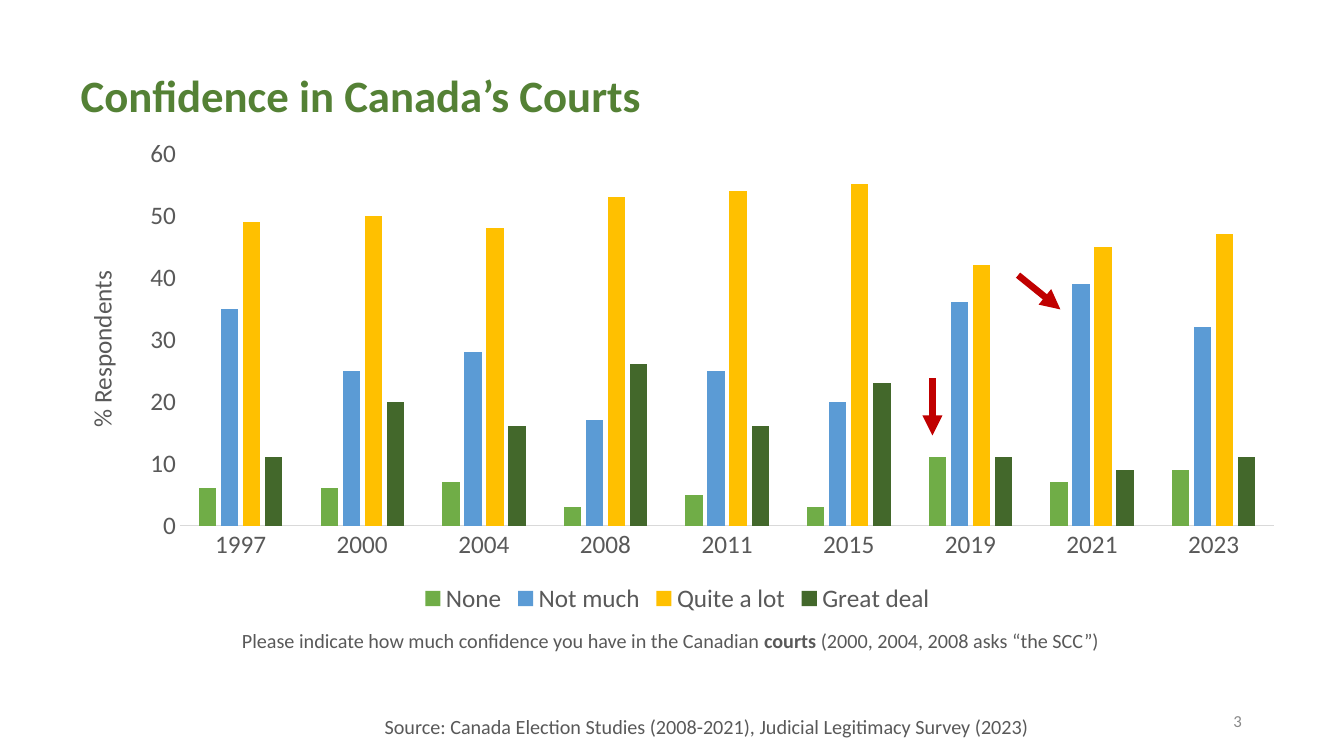
from dataclasses import dataclass

from pptx import Presentation
from pptx.chart.data import CategoryChartData
from pptx.dml.color import RGBColor
from pptx.enum.chart import XL_CHART_TYPE, XL_LEGEND_POSITION, XL_TICK_MARK
from pptx.enum.shapes import MSO_CONNECTOR
from pptx.enum.text import MSO_ANCHOR, PP_ALIGN
from pptx.oxml import parse_xml
from pptx.oxml.ns import nsdecls, qn
from pptx.util import Inches, Pt
from lxml.etree import SubElement


@dataclass(frozen=True)
class Theme:
    font: str = "Calibri"
    title: str = "548135"
    text: str = "595959"
    muted: str = "888888"
    axis: str = "D9D9D9"
    arrow: str = "C00000"
    title_size: float = 32
    chart_size: float = 18
    note_size: float = 14.4
    number_size: float = 12
    axis_width: float = 0.75
    arrow_width: float = 4.75


THEME = Theme()
WIDTH, HEIGHT = Inches(13.33), Inches(7.5)

YEARS = ["1997", "2000", "2004", "2008", "2011", "2015", "2019", "2021", "2023"]
ANSWERS = [
    ("None", "70AD47", [6, 6, 7, 3, 5, 3, 11, 7, 9]),
    ("Not much", "5B9BD5", [35, 25, 28, 17, 25, 20, 36, 39, 32]),
    ("Quite a lot", "FFC000", [49, 50, 48, 53, 54, 55, 42, 45, 47]),
    ("Great deal", "43682B", [11, 20, 16, 26, 16, 23, 11, 9, 11]),
]
PLOT_SHARES = {"x": 0.1, "y": 0.05, "w": 0.88, "h": 0.76}


def x_pct(share):
    return round(WIDTH * share / 100)


def y_pct(share):
    return round(HEIGHT * share / 100)


def place(left, top, width, height):
    return x_pct(left), y_pct(top), x_pct(width), y_pct(height)


def rgb(value):
    return RGBColor.from_string(value)


def set_font(font, size, color, bold=False):
    font.name = THEME.font
    font.size = Pt(size)
    font.bold = bold
    font.color.rgb = rgb(color)


def write(tf, *parts, size=THEME.note_size, color=THEME.text, bold=(),
          align=PP_ALIGN.CENTER, anchor=MSO_ANCHOR.TOP, spacing=None):
    tf.word_wrap = True
    tf.vertical_anchor = anchor
    p = tf.paragraphs[0]
    p.alignment = align
    p.line_spacing = spacing
    for part in parts:
        r = p.add_run()
        r.text = part
        set_font(r.font, size, color, part in bold)


def add_title(s, box, text):
    sp = s.shapes.title
    sp.left, sp.top, sp.width, sp.height = place(*box)
    write(sp.text_frame, text, size=THEME.title_size, color=THEME.title,
          bold=(text,), align=PP_ALIGN.LEFT, anchor=MSO_ANCHOR.MIDDLE, spacing=0.9)


def add_text(s, box, *parts, **style):
    write(s.shapes.add_textbox(*place(*box)).text_frame, *parts, **style)


def add_arrow(s, start, end):
    line = s.shapes.add_connector(
        MSO_CONNECTOR.STRAIGHT,
        x_pct(start[0]), y_pct(start[1]), x_pct(end[0]), y_pct(end[1]))
    line.line.color.rgb = rgb(THEME.arrow)
    line.line.width = Pt(THEME.arrow_width)
    SubElement(line.line._get_or_add_ln(), qn("a:tailEnd"), type="triangle")
    SubElement(line._element.spPr, qn("a:effectLst"))


def fix_plot_area(chart):
    area = chart._chartSpace.chart.plotArea
    for layout in area.findall(qn("c:layout")):
        area.remove(layout)
    shares = "".join(f'<c:{k} val="{v}"/>' for k, v in PLOT_SHARES.items())
    area.insert(0, parse_xml(
        f'<c:layout {nsdecls("c")}><c:manualLayout><c:layoutTarget val="inner"/>'
        f'<c:xMode val="edge"/><c:yMode val="edge"/>{shares}'
        '</c:manualLayout></c:layout>'))


def format_axis(axis):
    axis.major_tick_mark = axis.minor_tick_mark = XL_TICK_MARK.NONE
    axis.has_major_gridlines = False
    set_font(axis.tick_labels.font, THEME.chart_size, THEME.text)


def add_column_chart(s, box):
    data = CategoryChartData()
    data.categories = YEARS
    for name, _, values in ANSWERS:
        data.add_series(name, values)
    chart = s.shapes.add_chart(
        XL_CHART_TYPE.COLUMN_CLUSTERED, *place(*box), data).chart
    chart.has_title = False
    set_font(chart.font, THEME.chart_size, THEME.text)

    plot = chart.plots[0]
    plot.gap_width, plot.overlap, plot.vary_by_categories = 219, -27, False
    for series, (_, color, _) in zip(plot.series, ANSWERS):
        series.format.fill.solid()
        series.format.fill.fore_color.rgb = rgb(color)

    years, share = chart.category_axis, chart.value_axis
    format_axis(years)
    years.format.line.color.rgb = rgb(THEME.axis)
    years.format.line.width = Pt(THEME.axis_width)
    format_axis(share)
    share.format.line.fill.background()
    share.minimum_scale, share.maximum_scale, share.major_unit = 0, 60, 10
    write_axis_title(share, "% Respondents")

    chart.has_legend = True
    chart.legend.position = XL_LEGEND_POSITION.BOTTOM
    chart.legend.include_in_layout = False
    set_font(chart.legend.font, THEME.chart_size, THEME.text)
    fix_plot_area(chart)


def write_axis_title(axis, text):
    axis.has_title = True
    p = axis.axis_title.text_frame.paragraphs[0]
    r = p.add_run()
    r.text = text
    set_font(r.font, THEME.chart_size, THEME.text)


def main():
    prs = Presentation()
    prs.slide_width, prs.slide_height = WIDTH, HEIGHT
    s = prs.slides.add_slide(prs.slide_layouts[5])

    add_text(s, (70.65, 92.67, 22.5, 5.33), "3", size=THEME.number_size,
             color=THEME.muted, align=PP_ALIGN.RIGHT, anchor=MSO_ANCHOR.MIDDLE)
    add_title(s, (5.25, 3.33, 86.25, 19.33), "Confidence in Canada’s Courts")
    add_text(s, (12.83, 82.4, 74.1, 4.53),
             "Please indicate how much confidence you have in the Canadian ",
             "courts", " (2000, 2004, 2008 asks “the SCC”)", bold=("courts",))
    add_text(s, (14.93, 93.87, 75.3, 4.53),
             "Source: Canada Election Studies (2008-2021), "
             "Judicial Legitimacy Survey (2023)")
    add_column_chart(s, (4.13, 17.07, 92.55, 64.8))
    add_arrow(s, (69.38, 50), (69.38, 57.6))
    add_arrow(s, (75.75, 36.4), (78.9, 40.93))

    prs.save("out.pptx")


if __name__ == "__main__":
    main()
